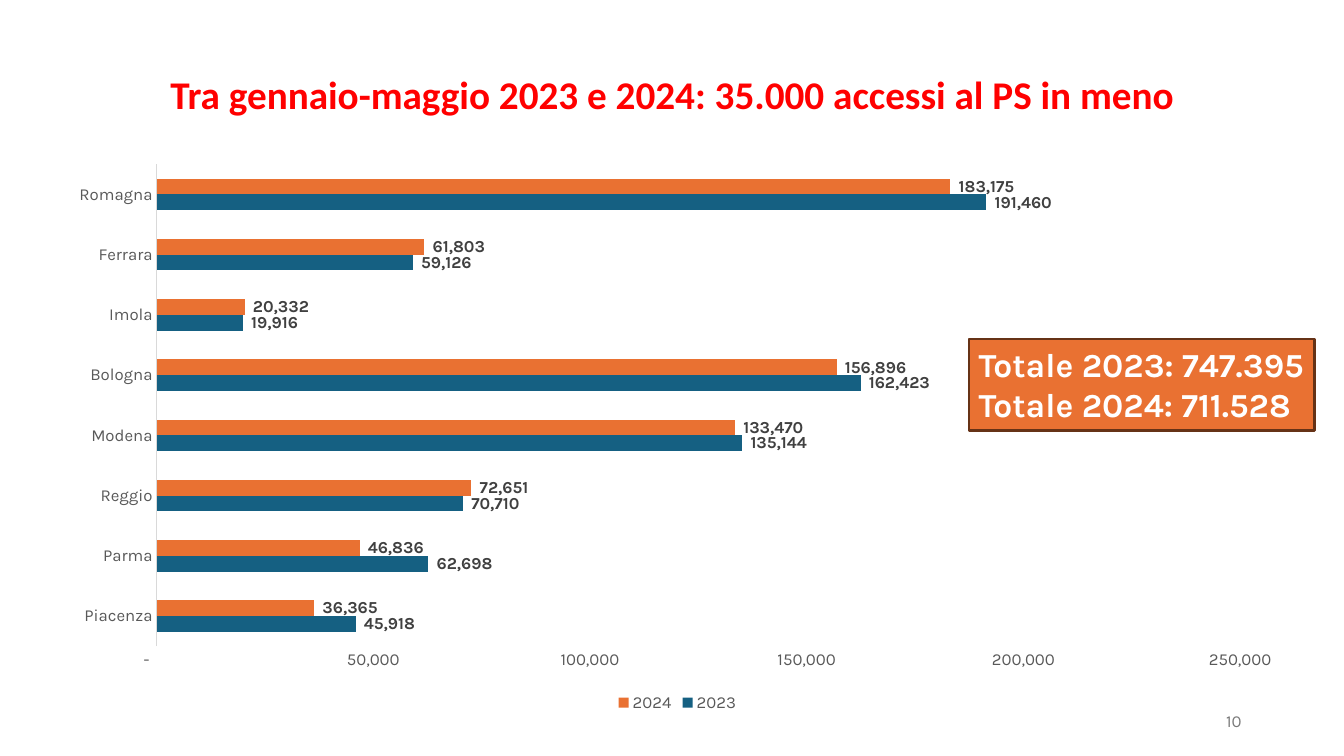
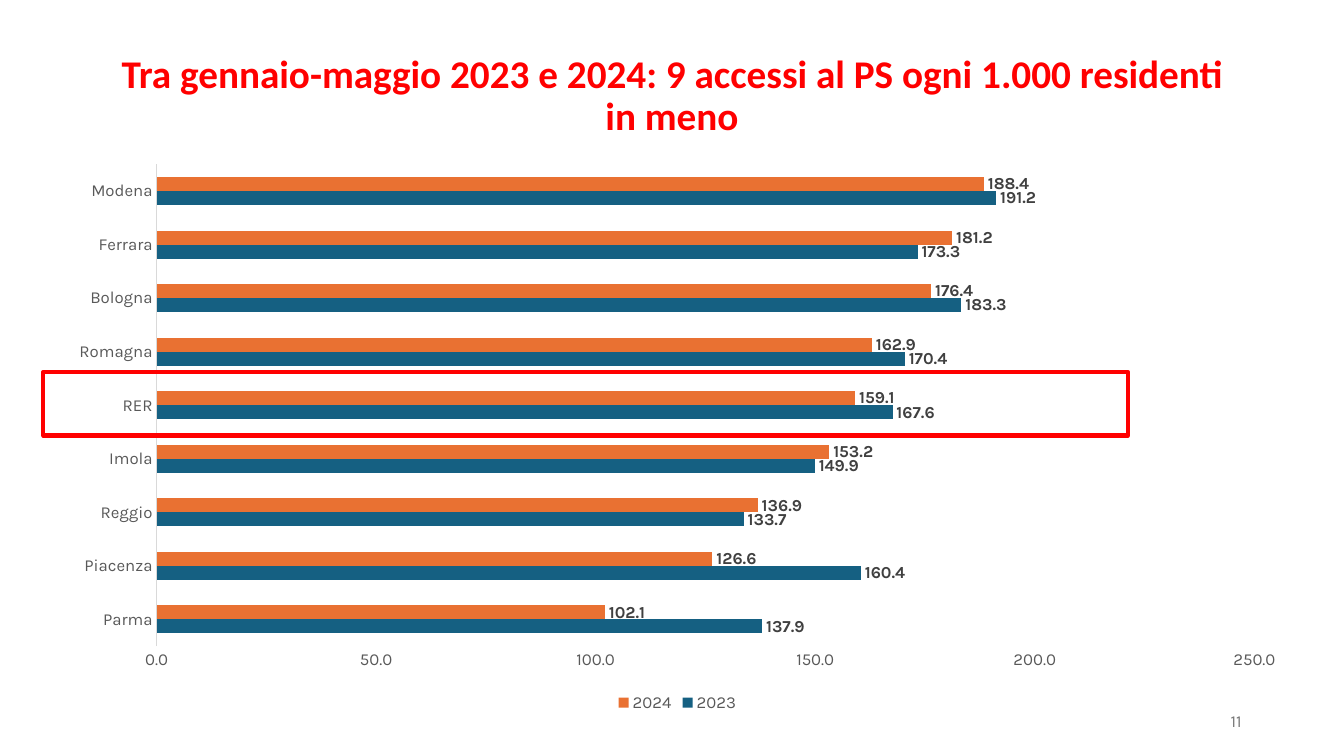
from dataclasses import dataclass

from pptx import Presentation
from pptx.chart.axis import CategoryAxis, ValueAxis
from pptx.chart.chart import Chart
from pptx.chart.data import CategoryChartData
from pptx.dml.color import RGBColor
from pptx.enum.chart import XL_CHART_TYPE, XL_LABEL_POSITION, XL_LEGEND_POSITION, XL_TICK_MARK
from pptx.enum.shapes import MSO_SHAPE
from pptx.enum.text import MSO_ANCHOR, MSO_AUTO_SIZE, PP_ALIGN
from pptx.shapes.autoshape import Shape
from pptx.slide import Slide
from pptx.text.text import Font
from pptx.util import Pt


@dataclass(frozen=True)
class Theme:
    title_font: str = "Calibri"
    body_font: str = "Karla"
    title_size: float = 28
    total_size: float = 24
    small_size: float = 12
    red: str = "FF0000"
    orange: str = "E97132"
    blue: str = "156082"
    brown: str = "663216"
    white: str = "FFFFFF"
    axis_text: str = "595959"
    axis_line: str = "D9D9D9"
    label_text: str = "404040"
    number_text: str = "797979"


@dataclass(frozen=True)
class Box:
    left: float
    top: float
    width: float
    height: float

    def lengths(self) -> tuple[Pt, Pt, Pt, Pt]:
        return Pt(self.left), Pt(self.top), Pt(self.width), Pt(self.height)


@dataclass(frozen=True)
class District:
    name: str
    value_2023: float
    value_2024: float


@dataclass(frozen=True)
class ChartSlide:
    number: int
    title: str
    number_format: str
    axis_maximum: float
    axis_step: float
    districts: tuple[District, ...]


THEME = Theme()
TITLE_BOX = Box(66, 28.8, 828, 80.6)
CHART_BOX = Box(38.9, 109.4, 890, 402.5)
NUMBER_BOX = Box(678, 500.4, 216, 28.8)
TOTALS_BOX = Box(692, 242, 247, 65.5)
HIGHLIGHT_BOX = Box(31, 265.7, 774.7, 45.4)

ACCESSES = ChartSlide(
    10,
    "Tra gennaio-maggio 2023 e 2024: 35.000 accessi al PS in meno",
    '_-* #,##0_-;\\-* #,##0_-;_-* "-"??_-;_-@_',
    250000,
    50000,
    (
        District("Piacenza", 45918, 36365),
        District("Parma", 62698, 46836),
        District("Reggio", 70710, 72651),
        District("Modena", 135144, 133470),
        District("Bologna", 162423, 156896),
        District("Imola", 19916, 20332),
        District("Ferrara", 59126, 61803),
        District("Romagna", 191460, 183175),
    ),
)
RATES = ChartSlide(
    11,
    "Tra gennaio-maggio 2023 e 2024: 9 accessi al PS ogni 1.000 residenti in meno",
    "0.0",
    250,
    50,
    (
        District("Parma", 137.9, 102.1),
        District("Piacenza", 160.4, 126.6),
        District("Reggio", 133.7, 136.9),
        District("Imola", 149.9, 153.2),
        District("RER", 167.6, 159.1),
        District("Romagna", 170.4, 162.9),
        District("Bologna", 183.3, 176.4),
        District("Ferrara", 173.3, 181.2),
        District("Modena", 191.2, 188.4),
    ),
)


def style_font(font: Font, size: float, color: str, bold: bool = False,
               name: str = THEME.body_font) -> None:
    font.name = name
    font.size = Pt(size)
    font.bold = bold
    font.color.rgb = RGBColor.from_string(color)


def add_title(slide: Slide, text: str) -> None:
    title = slide.shapes.title
    title.left, title.top, title.width, title.height = TITLE_BOX.lengths()
    frame = title.text_frame
    frame.text = text
    frame.word_wrap = True
    frame.auto_size = MSO_AUTO_SIZE.NONE
    frame.vertical_anchor = MSO_ANCHOR.MIDDLE
    paragraph = frame.paragraphs[0]
    paragraph.alignment = PP_ALIGN.CENTER
    paragraph.line_spacing = 0.9
    style_font(paragraph.runs[0].font, THEME.title_size, THEME.red, True, THEME.title_font)


def add_number(slide: Slide, number: int) -> None:
    frame = slide.shapes.add_textbox(*NUMBER_BOX.lengths()).text_frame
    frame.text = str(number)
    frame.word_wrap = True
    frame.vertical_anchor = MSO_ANCHOR.MIDDLE
    paragraph = frame.paragraphs[0]
    paragraph.alignment = PP_ALIGN.RIGHT
    style_font(paragraph.runs[0].font, THEME.small_size, THEME.number_text)


def style_axis(axis: CategoryAxis | ValueAxis) -> None:
    axis.has_major_gridlines = False
    axis.major_tick_mark = XL_TICK_MARK.NONE
    axis.minor_tick_mark = XL_TICK_MARK.NONE
    style_font(axis.tick_labels.font, THEME.small_size, THEME.axis_text)


def style_axes(chart: Chart, content: ChartSlide) -> None:
    style_axis(chart.category_axis)
    category_line = chart.category_axis.format.line
    category_line.color.rgb = RGBColor.from_string(THEME.axis_line)
    category_line.width = Pt(0.75)

    value_axis = chart.value_axis
    style_axis(value_axis)
    value_axis.minimum_scale = 0
    value_axis.maximum_scale = content.axis_maximum
    value_axis.major_unit = content.axis_step
    value_axis.format.line.fill.background()
    value_axis.tick_labels.number_format = content.number_format
    value_axis.tick_labels.number_format_is_linked = False


def style_series(chart: Chart, number_format: str) -> None:
    plot = chart.plots[0]
    plot.vary_by_categories = False
    plot.gap_width = 182
    for series, color in zip(plot.series, (THEME.blue, THEME.orange)):
        series.invert_if_negative = False
        series.format.fill.solid()
        series.format.fill.fore_color.rgb = RGBColor.from_string(color)
        labels = series.data_labels
        labels.show_value = True
        labels.position = XL_LABEL_POSITION.OUTSIDE_END
        labels.number_format = number_format
        labels.number_format_is_linked = False
        style_font(labels.font, THEME.small_size, THEME.label_text, True)


def add_bar_chart(slide: Slide, content: ChartSlide) -> None:
    data = CategoryChartData(number_format=content.number_format)
    data.categories = [district.name for district in content.districts]
    data.add_series("2023", [district.value_2023 for district in content.districts])
    data.add_series("2024", [district.value_2024 for district in content.districts])
    chart = slide.shapes.add_chart(
        XL_CHART_TYPE.BAR_CLUSTERED, *CHART_BOX.lengths(), data
    ).chart
    chart.has_title = False
    chart.font.name = THEME.body_font
    chart.has_legend = True
    chart.legend.position = XL_LEGEND_POSITION.BOTTOM
    chart.legend.include_in_layout = False
    style_font(chart.legend.font, THEME.small_size, THEME.axis_text)
    style_axes(chart, content)
    style_series(chart, content.number_format)


def add_rectangle(slide: Slide, box: Box, line_color: str, line_width: float,
                  fill_color: str | None = None) -> Shape:
    shape = slide.shapes.add_shape(MSO_SHAPE.RECTANGLE, *box.lengths())
    shape.shadow.inherit = False
    if fill_color is None:
        shape.fill.background()
    else:
        shape.fill.solid()
        shape.fill.fore_color.rgb = RGBColor.from_string(fill_color)
    shape.line.color.rgb = RGBColor.from_string(line_color)
    shape.line.width = Pt(line_width)
    return shape


def add_totals(slide: Slide) -> None:
    shape = add_rectangle(slide, TOTALS_BOX, THEME.brown, 1.5, THEME.orange)
    frame = shape.text_frame
    frame.text = "Totale 2023: 747.395\nTotale 2024: 711.528"
    frame.word_wrap = False
    frame.auto_size = MSO_AUTO_SIZE.SHAPE_TO_FIT_TEXT
    frame.vertical_anchor = MSO_ANCHOR.TOP
    for paragraph in frame.paragraphs:
        paragraph.alignment = PP_ALIGN.LEFT
        style_font(paragraph.runs[0].font, THEME.total_size, THEME.white, True)


def add_chart_slide(presentation: Presentation, content: ChartSlide) -> Slide:
    slide = presentation.slides.add_slide(presentation.slide_layouts.get_by_name("Title Only"))
    add_bar_chart(slide, content)
    add_number(slide, content.number)
    add_title(slide, content.title)
    return slide


def main() -> None:
    presentation = Presentation()
    presentation.slide_width = Pt(960)
    presentation.slide_height = Pt(540)
    add_totals(add_chart_slide(presentation, ACCESSES))
    add_rectangle(add_chart_slide(presentation, RATES), HIGHLIGHT_BOX, THEME.red, 3)
    presentation.save("out.pptx")


if __name__ == "__main__":
    main()
